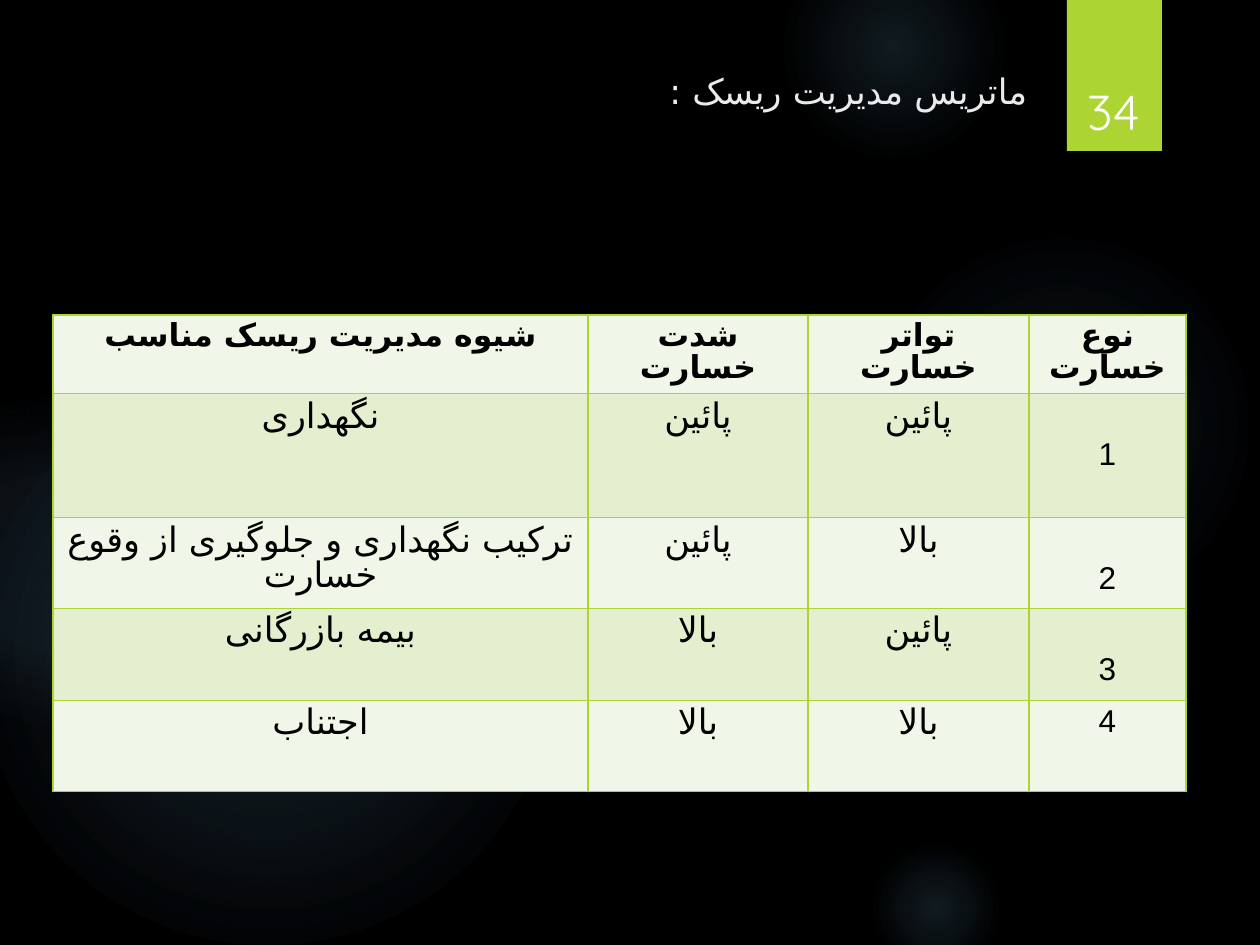
from dataclasses import dataclass

from lxml.etree import SubElement
from pptx import Presentation
from pptx.dml.color import RGBColor
from pptx.enum.shapes import MSO_SHAPE
from pptx.enum.text import MSO_ANCHOR, PP_ALIGN
from pptx.oxml import parse_xml
from pptx.oxml.ns import nsdecls, qn
from pptx.util import Emu, Pt

PX_PER_INCH = 126
FONT = "Quicksand"
PERSIAN_FONT = "DejaVu Sans"
DIGIT_FONT = "Arial"
GREEN = "ACD433"
GLOW = "7AC4F0"
BAND_FILLS = ("F1F7E8", "E3EFCE")


@dataclass
class Glow:
    left: int
    top: int
    size: int
    stops: tuple


@dataclass
class RiskRow:
    height: int
    texts: tuple
    number_drop: int = 0


GLOWS = (
    Glow(868, 231, 388, ((0, 7), (36, 6), (69, 0))),
    Glow(784, -63, 220, ((0, 14), (36, 7), (73, 0))),
    Glow(868, 840, 136, ((0, 14), (36, 7), (66, 0))),
    Glow(-21, 368, 577, ((0, 11), (36, 10), (75, 0))),
    Glow(-116, 399, 325, ((0, 8), (36, 8), (72, 0))),
)

COLUMN_WIDTHS = (535, 220, 221, 157)
ROWS = (
    RiskRow(75, ("شیوه مدیریت ریسک مناسب", "شدت خسارت", "تواتر خسارت", "نوع خسارت")),
    RiskRow(124, ("نگهداری", "پائین", "پائین", "1"), 42),
    RiskRow(91, ("ترکیب نگهداری و جلوگیری از وقوع خسارت", "پائین", "بالا", "2"), 42),
    RiskRow(92, ("بیمه بازرگانی", "بالا", "پائین", "3"), 42),
    RiskRow(91, ("اجتناب", "بالا", "بالا", "4"), 2),
)


def px(length: int) -> Emu:
    return Emu(round(length * 914400 / PX_PER_INCH))


def color(value: str) -> RGBColor:
    return RGBColor.from_string(value)


def write(text_frame, text: str, size: int, hex_color: str, alignment,
          bold: bool = False, right_to_left: bool = True):
    text_frame.word_wrap = True
    text_frame.text = text
    paragraph = text_frame.paragraphs[0]
    paragraph.alignment = alignment
    font = paragraph.runs[0].font
    font.name = FONT
    font.size = Pt(size)
    font.bold = bold
    font.color.rgb = color(hex_color)
    if right_to_left:
        paragraph._p.get_or_add_pPr().set("rtl", "1")
        complex_font = DIGIT_FONT if text.isdigit() else PERSIAN_FONT
        SubElement(font._element, qn("a:cs"), typeface=complex_font)
    return paragraph


def add_plain_shape(slide, kind, left: int, top: int, width: int, height: int):
    shape = slide.shapes.add_shape(kind, px(left), px(top), px(width), px(height))
    shape.shadow.inherit = False
    shape.line.fill.background()
    return shape


def add_glow(slide, glow: Glow) -> None:
    shape = add_plain_shape(slide, MSO_SHAPE.OVAL, glow.left, glow.top, glow.size, glow.size)
    stops = "".join(
        f'<a:gs pos="{position * 1000}"><a:srgbClr val="{GLOW}">'
        f'<a:alpha val="{alpha * 1000}"/></a:srgbClr></a:gs>'
        for position, alpha in glow.stops
    )
    gradient = parse_xml(
        f'<a:gradFill {nsdecls("a")} rotWithShape="1"><a:gsLst>{stops}</a:gsLst>'
        '<a:path path="circle"><a:fillToRect l="50000" t="50000" r="50000" b="50000"/>'
        '</a:path></a:gradFill>'
    )
    shape._element.spPr.find(qn("a:prstGeom")).addnext(gradient)


def add_number_tab(slide) -> None:
    tab = add_plain_shape(slide, MSO_SHAPE.RECTANGLE, 1067, 0, 95, 151)
    tab.fill.solid()
    tab.fill.fore_color.rgb = color(GREEN)
    effects = tab._element.spPr.find(qn("a:effectLst"))
    shadow = SubElement(effects, qn("a:outerShdw"), blurRad=str(Pt(3)),
                        dist=str(Pt(2)), dir="5400000", rotWithShape="0")
    shadow_color = SubElement(shadow, qn("a:srgbClr"), val="000000")
    SubElement(shadow_color, qn("a:alpha"), val="45000")


def add_text_box(slide, left: int, top: int, width: int, height: int, anchor):
    box = slide.shapes.add_textbox(px(left), px(top), px(width), px(height))
    box.text_frame.vertical_anchor = anchor
    return box.text_frame


def add_borders(cell) -> None:
    properties = cell._tc.get_or_add_tcPr()
    for index, side in enumerate(("lnL", "lnR", "lnT", "lnB")):
        properties.insert(index, parse_xml(
            f'<a:{side} {nsdecls("a")} w="{Pt(1)}"><a:solidFill>'
            f'<a:srgbClr val="{GREEN}"/></a:solidFill></a:{side}>'
        ))


def add_risk_table(slide) -> None:
    table = slide.shapes.add_table(
        len(ROWS), len(COLUMN_WIDTHS), px(53), px(315),
        px(sum(COLUMN_WIDTHS)), px(sum(row.height for row in ROWS)),
    ).table
    for column, width in zip(table.columns, COLUMN_WIDTHS):
        column.width = px(width)
    for row_index, row in enumerate(ROWS):
        table.rows[row_index].height = px(row.height)
        is_header = row_index == 0
        for column_index, text in enumerate(row.texts):
            cell = table.cell(row_index, column_index)
            cell.fill.solid()
            cell.fill.fore_color.rgb = color(BAND_FILLS[row_index % 2])
            is_number = column_index == len(row.texts) - 1
            size = 18 if is_header or is_number else 20
            paragraph = write(cell.text_frame, text, size, "000000",
                              PP_ALIGN.CENTER, bold=is_header)
            paragraph.line_spacing = 0.87
            if is_number:
                cell.margin_top = px(6 + row.number_drop)
            add_borders(cell)


def main() -> None:
    presentation = Presentation()
    presentation.slide_width = px(1260)
    presentation.slide_height = px(945)
    slide = presentation.slides.add_slide(presentation.slide_layouts[6])
    slide.background.fill.solid()
    slide.background.fill.fore_color.rgb = color("000000")

    for glow in GLOWS:
        add_glow(slide, glow)
    add_number_tab(slide)
    title = add_text_box(slide, 67, 63, 973, 193, MSO_ANCHOR.TOP)
    write(title, "ماتریس مدیریت ریسک :", 20, "EBEBEB", PP_ALIGN.JUSTIFY)
    add_risk_table(slide)
    number = add_text_box(slide, 1070, 40, 87, 107, MSO_ANCHOR.BOTTOM)
    write(number, "34", 28, "FFFFFF", PP_ALIGN.CENTER, right_to_left=False)

    presentation.save("out.pptx")


if __name__ == "__main__":
    main()
